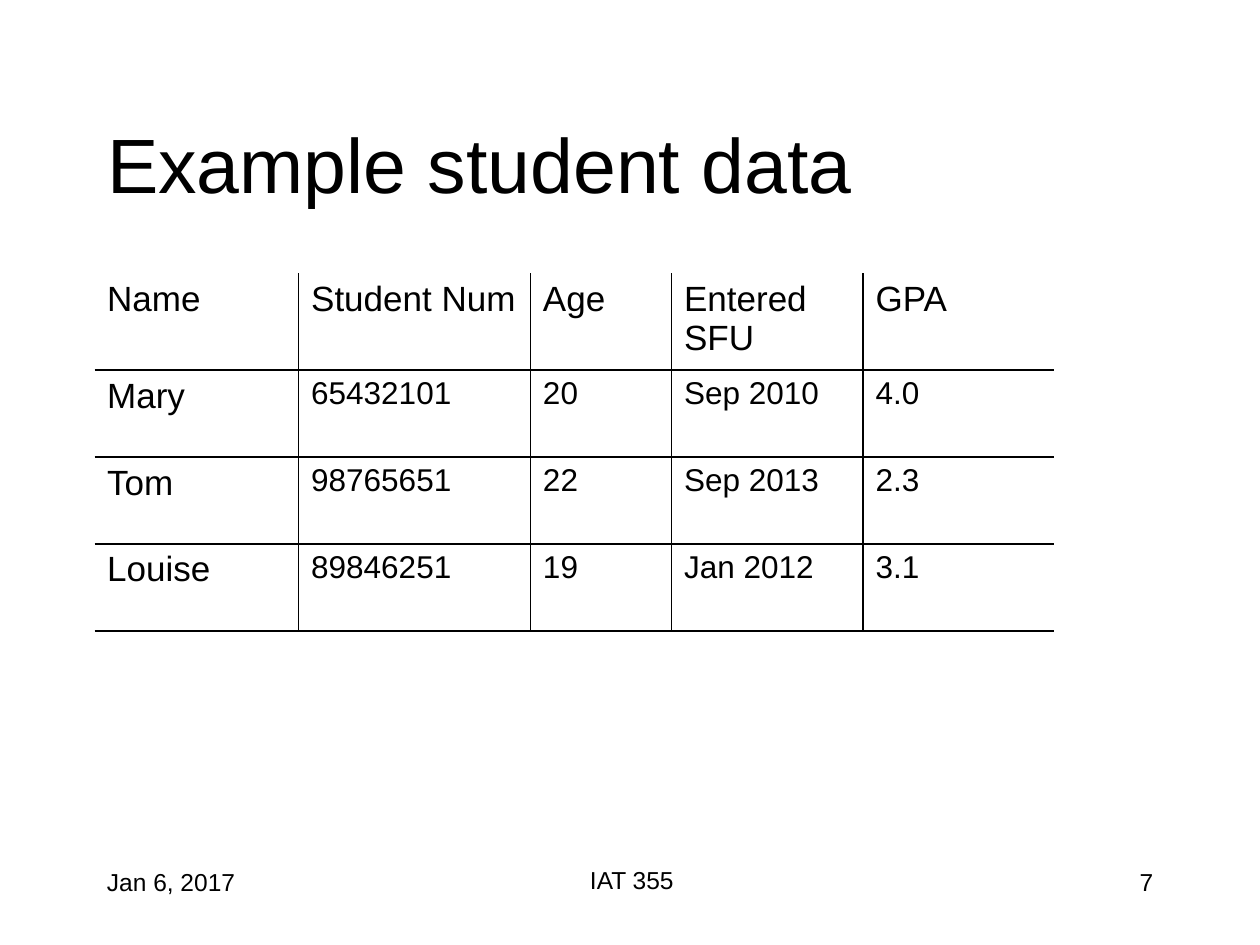
import pptx
import pptx.dml.color
import pptx.enum.text
import pptx.oxml
import pptx.oxml.ns
import pptx.util

Inches = pptx.util.Inches
Pt = pptx.util.Pt
ALIGN = pptx.enum.text.PP_ALIGN

COLOURS = {"ink": "000000"}
MARGIN = 0.75
COLUMN_WIDTHS = [1.62, 1.84, 1.12, 1.52, 1.52]
ROW_HEIGHT = 0.69
NO_STYLE = "{2D5ABB26-0587-4C30-8999-92F81FD0307C}"
STUDENTS = [
    ["Name", "Student Num", "Age", "Entered SFU", "GPA"],
    ["Mary", "65432101", "20", "Sep 2010", "4.0"],
    ["Tom", "98765651", "22", "Sep 2013", "2.3"],
    ["Louise", "89846251", "19", "Jan 2012", "3.1"],
]
FOOTERS = [
    ("Jan 6, 2017", MARGIN, 6.83, 2.08, ALIGN.LEFT),
    ("IAT 355", 3.43, 6.82, 3.17, ALIGN.CENTER),
    ("7", 7.17, 6.83, 2.08, ALIGN.RIGHT),
]


def write(frame, wording, size, alignment=ALIGN.LEFT):
    """Put one formatted paragraph into a text frame."""
    frame.word_wrap = True
    paragraph = frame.paragraphs[0]
    paragraph.alignment = alignment
    run = paragraph.add_run()
    run.text = wording
    for name, value in {"name": "Arial", "size": Pt(size), "bold": False}.items():
        setattr(run.font, name, value)
    run.font.color.rgb = pptx.dml.color.RGBColor.from_string(COLOURS["ink"])


def add_title(slide, wording):
    """Place and fill the title placeholder."""
    title = slide.shapes.title
    place = {"left": MARGIN, "top": 0.67, "width": 8.5, "height": 1.25}
    for name, value in place.items():
        setattr(title, name, Inches(value))
    title.text_frame.auto_size = pptx.enum.text.MSO_AUTO_SIZE.NONE
    title.text_frame.vertical_anchor = pptx.enum.text.MSO_ANCHOR.MIDDLE
    write(title.text_frame, wording, 44)


def add_footer(slide, wording, left, top, width, alignment):
    """Add one text of the footer line."""
    footer = slide.shapes.add_textbox(*map(Inches, (left, top, width, 0.5)))
    write(footer.text_frame, wording, 14, alignment)


def rule_cell(cell, sides):
    """Draw one-point rules on the given sides of a cell, in L, R, T, B order."""
    properties = cell._tc.get_or_add_tcPr()
    for side in sides:
        properties.append(pptx.oxml.parse_xml(
            f'<a:ln{side} {pptx.oxml.ns.nsdecls("a")} w="{Pt(1)}"><a:solidFill>'
            f'<a:srgbClr val="{COLOURS["ink"]}"/></a:solidFill></a:ln{side}>'))


def add_student_table(slide):
    """Add the student table with inner rules and a bottom rule."""
    rows, columns = len(STUDENTS), len(COLUMN_WIDTHS)
    frame = slide.shapes.add_table(
        rows, columns, Inches(MARGIN), Inches(2.17),
        Inches(sum(COLUMN_WIDTHS)), Inches(rows * ROW_HEIGHT))
    table = frame.table
    table._tbl.tblPr.find(pptx.oxml.ns.qn("a:tableStyleId")).text = NO_STYLE
    for flag in ("first_row", "horz_banding"):
        setattr(table, flag, False)
    for column, width in zip(table.columns, COLUMN_WIDTHS):
        column.width = Inches(width)
    for r, record in enumerate(STUDENTS):
        table.rows[r].height = Inches(ROW_HEIGHT)
        for c, value in enumerate(record):
            cell = table.cell(r, c)
            drawn = {"L": c > 0, "R": c < columns - 1, "T": r > 0, "B": True}
            rule_cell(cell, [side for side, shown in drawn.items() if shown])
            cell.fill.background()
            write(cell.text_frame, value, 20 if r == 0 or c == 0 else 18)


def main():
    """Build and save the slide."""
    deck = pptx.Presentation()
    deck.slide_width, deck.slide_height = Inches(10), Inches(7.5)
    slide = deck.slides.add_slide(deck.slide_layouts.get_by_name("Title Only"))
    for footer in FOOTERS:
        add_footer(slide, *footer)
    add_title(slide, "Example student data")
    add_student_table(slide)
    deck.save("out.pptx")


if __name__ == "__main__":
    main()
